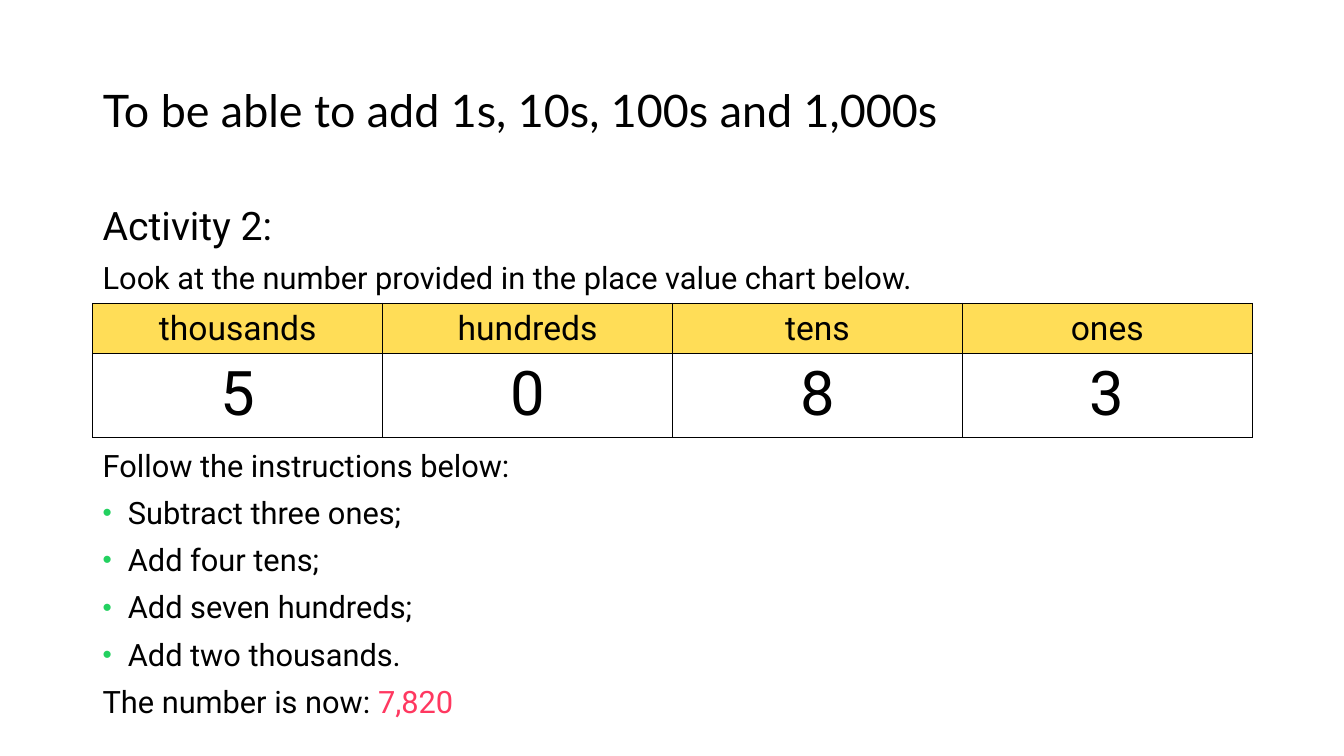
from lxml.etree import SubElement
from pptx import Presentation
from pptx.dml.color import RGBColor
from pptx.enum.text import MSO_ANCHOR as Anchor, MSO_AUTO_SIZE as AutoSize, PP_ALIGN as Align
from pptx.oxml.ns import qn
from pptx.util import Inches, Pt

BLACK, WHITE, YELLOW, GREEN, RED = "000000", "FFFFFF", "FFDD57", "23D160", "FF3860"
LEFT, WIDTH = 0.92, 11.5


def color(value):
    return RGBColor.from_string(value)


def add_span(para, text, size=22, font="Roboto", ink=BLACK):
    span = para.add_run()
    span.text = text
    span.font.size = Pt(size)
    span.font.name = font
    span.font.bold = False
    span.font.color.rgb = color(ink)


def add_bullet(para):
    props = para._p.get_or_add_pPr()
    props.set("marL", str(Inches(0.25)))
    props.set("indent", str(-Inches(0.25)))
    bullet_color = SubElement(props, qn("a:buClr"))
    SubElement(bullet_color, qn("a:srgbClr"), val=GREEN)
    SubElement(props, qn("a:buSzPct"), val="85000")
    SubElement(props, qn("a:buFont"), typeface="Arial")
    SubElement(props, qn("a:buChar"), char="•")


def add_title(page, text):
    title = page.shapes.title
    title.left, title.top = Inches(LEFT), Inches(0.4)
    title.width, title.height = Inches(9.6), Inches(1.45)
    frame = title.text_frame
    frame.auto_size = AutoSize.NONE
    frame.vertical_anchor = Anchor.MIDDLE
    para = frame.paragraphs[0]
    para.alignment = Align.LEFT
    para.line_spacing = 0.9
    add_span(para, text, size=32, font="Lato")


def add_text(page, top, height, lines):
    box = page.shapes.add_textbox(Inches(LEFT), Inches(top), Inches(WIDTH), Inches(height))
    frame = box.text_frame
    frame.word_wrap = True
    for index, (bulleted, spans) in enumerate(lines):
        para = frame.add_paragraph() if index else frame.paragraphs[0]
        para.line_spacing = 0.9
        para.space_before = Pt(10 if index else 0)
        if bulleted:
            add_bullet(para)
        for text, style in spans:
            add_span(para, text, **style)


def add_borders(cell):
    props = cell._tc.get_or_add_tcPr()
    for side in ("lnL", "lnR", "lnT", "lnB"):
        line = SubElement(props, qn(f"a:{side}"), w=str(Pt(1)))
        fill = SubElement(line, qn("a:solidFill"))
        SubElement(fill, qn("a:srgbClr"), val=BLACK)


def add_place_value_chart(page, top, places):
    rows = [(places.keys(), 0.5, 24, YELLOW, Anchor.MIDDLE),
            (places.values(), 0.82, 44, WHITE, Anchor.TOP)]
    frame = page.shapes.add_table(len(rows), len(places), Inches(LEFT), Inches(top),
                                  Inches(WIDTH), Inches(sum(row[1] for row in rows)))
    table = frame.table
    table.first_row = table.horz_banding = False
    for row, (texts, height, size, fill, anchor) in enumerate(rows):
        table.rows[row].height = Inches(height)
        for column, text in enumerate(texts):
            cell = table.cell(row, column)
            add_borders(cell)
            cell.fill.solid()
            cell.fill.fore_color.rgb = color(fill)
            cell.vertical_anchor = anchor
            para = cell.text_frame.paragraphs[0]
            para.alignment = Align.CENTER
            add_span(para, text, size=size)


def main():
    deck = Presentation()
    deck.slide_width, deck.slide_height = Inches(13.33), Inches(7.5)
    page = deck.slides.add_slide(deck.slide_layouts[5])
    add_title(page, "To be able to add 1s, 10s, 100s and 1,000s")
    add_text(page, 2, 1, [
        (False, [("Activity 2:", {"size": 28})]),
        (False, [("Look at the number provided in the place value chart below.", {})]),
    ])
    add_place_value_chart(page, 3.01, {"thousands": "5", "hundreds": "0", "tens": "8", "ones": "3"})
    steps = ["Subtract three ones;", "Add four tens;", "Add seven hundreds;", "Add two thousands."]
    add_text(page, 4.42, 2.8, [
        (False, [("Follow the instructions below:", {})]),
        *[(True, [(step, {})]) for step in steps],
        (False, [("The number is now: ", {}), ("7,820", {"ink": RED})]),
    ])
    deck.save("out.pptx")


if __name__ == "__main__":
    main()
